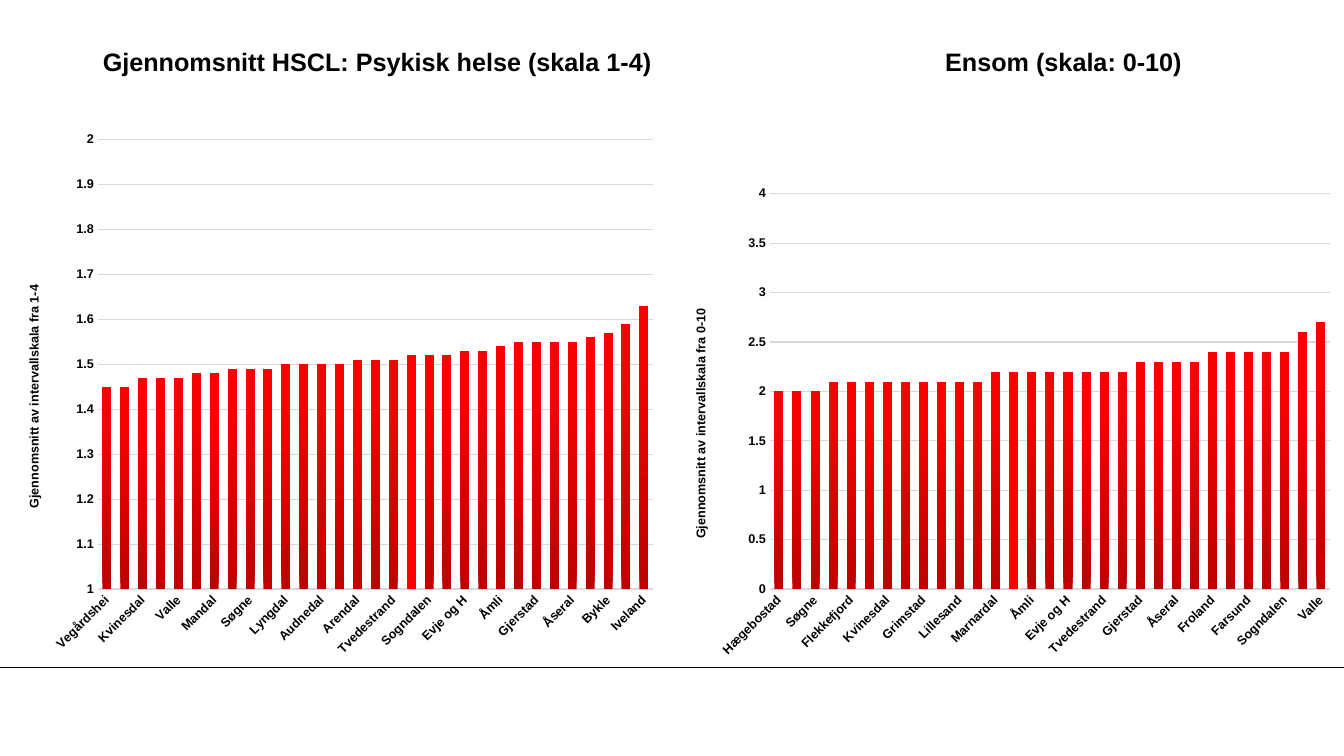
from dataclasses import dataclass

from lxml import etree
from pptx import Presentation
from pptx.chart.data import CategoryChartData
from pptx.dml.color import RGBColor
from pptx.enum.chart import XL_CHART_TYPE, XL_TICK_MARK
from pptx.enum.shapes import MSO_CONNECTOR
from pptx.enum.text import MSO_ANCHOR, PP_ALIGN
from pptx.oxml.ns import qn
from pptx.util import Cm, Pt

COLUMN = XL_CHART_TYPE.COLUMN_CLUSTERED
NO_TICK = XL_TICK_MARK.NONE
STRAIGHT = MSO_CONNECTOR.STRAIGHT
LEFT = PP_ALIGN.LEFT
MIDDLE = MSO_ANCHOR.MIDDLE

BLACK = RGBColor(0x00, 0x00, 0x00)
GRAY = RGBColor(0xD9, 0xD9, 0xD9)
DARK = RGBColor(0xBC, 0x02, 0x00)
LIGHT = RGBColor(0xF4, 0x03, 0x00)
RED = RGBColor(0xFF, 0x00, 0x00)
FONT = "Arial"
WIDE = 33.87
BASE = 16.81
TOP = 3.07
FOCUS = "Agder"


@dataclass
class Panel:
    head: str
    label: str
    left: float
    width: float
    low: float
    high: float
    step: float
    plot: dict[str, float]
    label_y: float
    names: list[str]
    vals: list[float]


PANELS = [
    Panel(
        "Gjennomsnitt HSCL: Psykisk helse (skala 1-4)",
        "Gjennomsnitt av intervallskala fra 1-4",
        0, 16.79, 1, 2, 0.1,
        {"x": 0.147, "y": 0.033, "w": 0.833, "h": 0.824}, 0.295,
        ["Vegårdshei", "Flekkefjord", "Kvinesdal", "Hægebostad", "Valle",
         "Lindesnes", "Mandal", "Lillesand", "Søgne", "Farsund", "Lyngdal",
         "Sirdal", "Audnedal", "Birkenes", "Arendal", "Grimstad",
         "Tvedestrand", "Agder", "Sogndalen", "Risør", "Evje og H",
         "Bygland", "Åmli", "Kristiansand", "Gjerstad", "Marnardal",
         "Åseral", "Vennesla", "Bykle", "Froland", "Iveland"],
        [1.45, 1.45, 1.47, 1.47, 1.47, 1.48, 1.48, 1.49, 1.49, 1.49, 1.5,
         1.5, 1.5, 1.5, 1.51, 1.51, 1.51, 1.52, 1.52, 1.52, 1.53, 1.53,
         1.54, 1.55, 1.55, 1.55, 1.55, 1.56, 1.57, 1.59, 1.63],
    ),
    Panel(
        "Ensom (skala: 0-10)",
        "Gjennomsnitt av intervallskala fra 0-10",
        16.79, 17.07, 0, 4, 0.5,
        {"x": 0.153, "y": 0.132, "w": 0.827, "h": 0.725}, 0.338,
        ["Hægebostad", "Lindesnes", "Søgne", "Mandal", "Flekkefjord",
         "Vegårdshei", "Kvinesdal", "Birkenes", "Grimstad", "Lyngdal",
         "Lillesand", "Arendal", "Marnardal", "Agder", "Åmli", "Vennesla",
         "Evje og H", "Risør", "Tvedestrand", "Kristiansand", "Gjerstad",
         "Bykle", "Åseral", "Audnedal", "Froland", "Sirdal", "Farsund",
         "Bygland", "Sogndalen", "Iveland", "Valle"],
        [2, 2, 2, 2.1, 2.1, 2.1, 2.1, 2.1, 2.1, 2.1, 2.1, 2.1, 2.2, 2.2,
         2.2, 2.2, 2.2, 2.2, 2.2, 2.2, 2.3, 2.3, 2.3, 2.3, 2.4, 2.4, 2.4,
         2.4, 2.4, 2.6, 2.7],
    ),
]


def style(font, size: float) -> None:
    font.name = FONT
    font.size = Pt(size)
    font.bold = True
    font.color.rgb = BLACK


def seek(chart, *tags: str):
    node = chart.element
    for tag in tags:
        node = next(node.iter(qn(tag)))
    return node


def place(owner, box: dict[str, float], spot: int, inner: bool = False) -> None:
    layout = owner.find(qn("c:layout"))
    if layout is None:
        layout = etree.Element(qn("c:layout"))
        owner.insert(spot, layout)
    manual = etree.SubElement(layout, qn("c:manualLayout"))
    if inner:
        etree.SubElement(manual, qn("c:layoutTarget")).set("val", "inner")
    for key in "xy":
        etree.SubElement(manual, qn(f"c:{key}Mode")).set("val", "edge")
    for key, part in box.items():
        etree.SubElement(manual, qn(f"c:{key}")).set("val", str(part))


def turn(owner, angle: int) -> None:
    body = next(owner.iter(qn("a:bodyPr")))
    body.set("rot", str(angle * 60000))
    body.set("vert", "horz")


def add_rule(slide) -> None:
    rule = slide.shapes.add_connector(
        STRAIGHT, Cm(0), Cm(BASE), Cm(WIDE), Cm(BASE))
    rule.line.color.rgb = BLACK
    rule.line.width = Pt(0.75)
    etree.SubElement(rule._element.spPr, qn("a:effectLst"))


def add_title(slide) -> None:
    title = slide.shapes.title
    title.left, title.top = Cm(1.55), Cm(0.81)
    title.width, title.height = Cm(31.29), Cm(1.3)
    frame = title.text_frame
    frame.margin_left, frame.margin_top = Cm(1.04), Cm(0.2)
    frame.margin_right = frame.margin_bottom = Cm(0)
    frame.vertical_anchor = MIDDLE
    frame.word_wrap = True
    para = frame.paragraphs[0]
    para.alignment = LEFT
    tabs = etree.SubElement(para._p.get_or_add_pPr(), qn("a:tabLst"))
    tab = etree.SubElement(tabs, qn("a:tab"))
    tab.set("pos", str(int(Cm(21.23))))
    tab.set("algn", "l")
    for text in (PANELS[0].head, "\t", PANELS[1].head):
        run = para.add_run()
        run.text = text
        style(run.font, 18)


def add_panel(slide, panel: Panel) -> None:
    data = CategoryChartData()
    data.categories = panel.names
    data.add_series("Series 1", panel.vals)
    chart = slide.shapes.add_chart(
        COLUMN, Cm(panel.left), Cm(TOP), Cm(panel.width), Cm(BASE - TOP),
        data).chart
    chart.has_title = False
    chart.has_legend = False
    chart.font.name = FONT
    chart.font.size = Pt(10)
    chart.font.color.rgb = BLACK
    place(seek(chart, "c:plotArea"), panel.plot, 0, True)

    plot = chart.plots[0]
    plot.gap_width = 100
    plot.overlap = -24
    plot.vary_by_categories = False
    bars = plot.series[0]
    bars.invert_if_negative = False
    fill = bars.format.fill
    fill.gradient()
    fill.gradient_angle = 90
    for stop, spot, color in zip(
            fill.gradient_stops, (0, 0.8), (DARK, LIGHT)):
        stop.position = spot
        stop.color.rgb = color
    focus = bars.points[panel.names.index(FOCUS)].format.fill
    focus.solid()
    focus.fore_color.rgb = RED

    names, scale = chart.category_axis, chart.value_axis
    for axis in (names, scale):
        axis.major_tick_mark = axis.minor_tick_mark = NO_TICK
        style(axis.tick_labels.font, 9)
    turn(seek(chart, "c:catAx", "c:txPr"), -45)
    names.format.line.color.rgb = GRAY
    names.format.line.width = Pt(1)
    scale.format.line.fill.background()
    scale.minimum_scale, scale.maximum_scale = panel.low, panel.high
    scale.major_unit = panel.step
    grid = scale.major_gridlines.format.line
    grid.color.rgb = GRAY
    grid.width = Pt(0.75)
    run = scale.axis_title.text_frame.paragraphs[0].add_run()
    run.text = panel.label
    style(run.font, 9)
    label = seek(chart, "c:valAx", "c:title")
    turn(label, -90)
    place(label, {"x": 0.035, "y": panel.label_y}, 1)


def main() -> None:
    deck = Presentation()
    deck.slide_width, deck.slide_height = Cm(WIDE), Cm(19.05)
    slide = deck.slides.add_slide(deck.slide_layouts[5])
    add_rule(slide)
    add_title(slide)
    for panel in PANELS:
        add_panel(slide, panel)
    deck.save("out.pptx")


if __name__ == "__main__":
    main()
